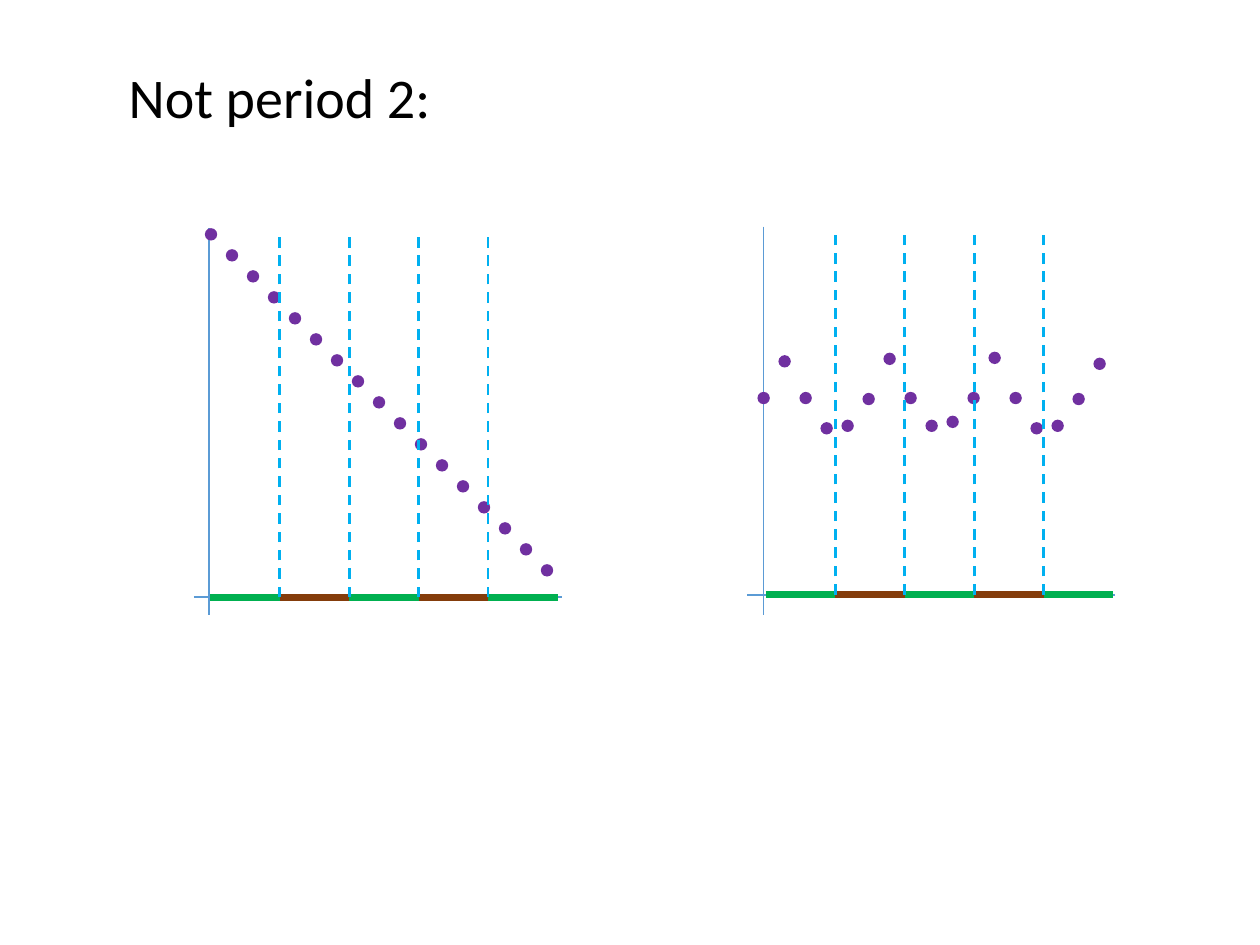
from lxml.etree import SubElement
from pptx import Presentation
from pptx.dml.color import RGBColor
from pptx.enum.dml import MSO_LINE
from pptx.enum.shapes import MSO_CONNECTOR, MSO_SHAPE
from pptx.enum.text import MSO_ANCHOR, MSO_AUTO_SIZE, PP_ALIGN
from pptx.oxml.ns import qn
from pptx.util import Cm, Pt

BLACK = RGBColor(0x00, 0x00, 0x00)
AXIS_BLUE = RGBColor(0x5B, 0x9B, 0xD5)
DASH_BLUE = RGBColor(0x00, 0xB0, 0xF0)
PURPLE = RGBColor(0x70, 0x30, 0xA0)
GREEN = RGBColor(0x00, 0xB0, 0x50)
BROWN = RGBColor(0x84, 0x3C, 0x0B)

# Content: lengths in centimetres, one dot top per sample
TITLE = "Not period 2:"
DOT_SIZE = 0.25
DOT_STEP = 1.27 / 3
BAND_WIDTH = 1.4
BAND_COLORS = [GREEN, BROWN, GREEN, BROWN, GREEN]
AXIS_BOTTOM = 12.4
GRAPHS = [
    {
        "axis_x": 4.22, "axis_top": 4.6, "base_y": 12.04, "base": (3.91, 11.33),
        "bands_left": 4.24, "dash_top": 4.72, "dots_left": 4.13,
        "dot_tops": [4.6 + DOT_STEP * i for i in range(17)],
    },
    {
        "axis_x": 15.39, "axis_top": 4.57, "base_y": 11.99, "base": (15.06, 22.48),
        "bands_left": 15.44, "dash_top": 4.7, "dots_left": 15.27,
        "dot_tops": [7.9, 7.16, 7.9, 8.51, 8.46, 7.92, 7.11, 7.9, 8.46,
                     8.38, 7.9, 7.09, 7.9, 8.51, 8.46, 7.92, 7.21],
    },
]


def add_line(page, start, end, color, width, dash=None):
    line = page.shapes.add_connector(
        MSO_CONNECTOR.STRAIGHT, *(Cm(value) for value in (*start, *end)))
    line.line.color.rgb = color
    line.line.width = Pt(width)
    if dash:
        line.line.dash_style = dash
    SubElement(line._element.spPr, qn("a:effectLst"))


def add_dot(page, left, top):
    dot = page.shapes.add_shape(
        MSO_SHAPE.OVAL, Cm(left), Cm(top), Cm(DOT_SIZE), Cm(DOT_SIZE))
    dot.shadow.inherit = False
    dot.fill.solid()
    dot.fill.fore_color.rgb = PURPLE
    dot.line.fill.background()


def add_graph(page, graph):
    base_y = graph["base_y"]
    base_left, base_right = graph["base"]
    # Axes
    add_line(page, (graph["axis_x"], graph["axis_top"]),
             (graph["axis_x"], AXIS_BOTTOM), AXIS_BLUE, 1)
    add_line(page, (base_left, base_y), (base_right, base_y), AXIS_BLUE, 1)
    # Samples
    for i, top in enumerate(graph["dot_tops"]):
        add_dot(page, graph["dots_left"] + i * DOT_STEP, top)
    # Coloured bands along the base
    edges = [graph["bands_left"] + i * BAND_WIDTH for i in range(len(BAND_COLORS) + 1)]
    for left, right, color in zip(edges, edges[1:], BAND_COLORS):
        add_line(page, (left, base_y), (right, base_y), color, 4)
    # Dashed dividers between bands
    for x in edges[1:-1]:
        add_line(page, (x, base_y), (x, graph["dash_top"]), DASH_BLUE, 1.5, MSO_LINE.DASH)


def add_title(page):
    box = page.shapes.title
    box.left, box.top, box.width, box.height = Cm(2.34), Cm(1.14), Cm(21.36), Cm(1.63)
    frame = box.text_frame
    frame.word_wrap = True
    frame.auto_size = MSO_AUTO_SIZE.NONE
    frame.vertical_anchor = MSO_ANCHOR.TOP
    para = frame.paragraphs[0]
    para.alignment = PP_ALIGN.LEFT
    span = para.add_run()
    span.text = TITLE
    span.font.name = "Calibri"
    span.font.size = Pt(32)
    span.font.color.rgb = BLACK


def main():
    deck = Presentation()
    deck.slide_width, deck.slide_height = Cm(25.4), Cm(19.05)
    page = deck.slides.add_slide(deck.slide_layouts.get_by_name("Title Only"))
    add_title(page)
    for graph in GRAPHS:
        add_graph(page, graph)
    deck.save("out.pptx")


if __name__ == "__main__":
    main()
